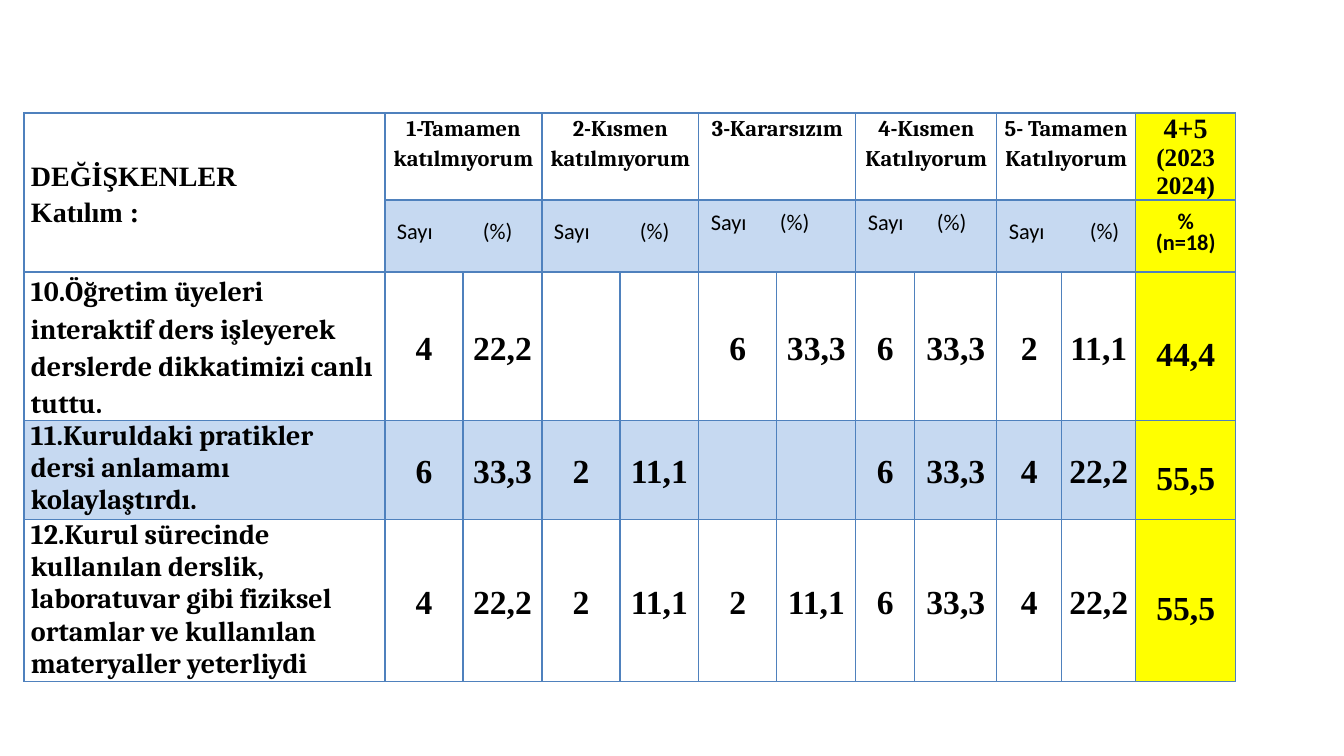
from dataclasses import dataclass

from lxml.etree import SubElement
from pptx import Presentation
from pptx.dml.color import RGBColor
from pptx.enum.text import MSO_ANCHOR as ANCHOR, PP_ALIGN as ALIGN
from pptx.oxml.ns import qn
from pptx.util import Pt

PX = 914400 / 100.8


def px(n):
    return round(n * PX)


@dataclass(frozen=True)
class Theme:
    ink: str = "000000"
    border: str = "4F81BD"
    band: str = "C6D9F1"
    total: str = "FFFF00"
    serif: str = "Times New Roman"
    label: str = "Cambria"
    sans: str = "Calibri"
    small: int = 16
    medium: int = 18
    large: int = 20
    figure: int = 24
    thin: float = 1
    thick: float = 2.25


class Deck:
    def __init__(self, theme):
        self.theme = theme
        self.prs = Presentation()
        self.prs.slide_width, self.prs.slide_height = px(1344), px(756)
        self.slide = self.prs.slides.add_slide(self.prs.slide_layouts[6])

    def table(self, left, top, widths, heights):
        frame = self.slide.shapes.add_table(
            len(heights), len(widths), px(left), px(top), px(sum(widths)), px(sum(heights)))
        table = frame.table
        table.first_row = table.horz_banding = False
        for column, width in zip(table.columns, widths):
            column.width = px(width)
        for row, height in zip(table.rows, heights):
            row.height = px(height)
        return table

    def cell(self, cell, fill=None, top=None, bottom=None):
        """Draw the borders, fill and margins of one cell."""
        thin = self.theme.thin
        for side, width in zip("LRTB", (thin, thin, top or thin, bottom or thin)):
            ln = SubElement(cell._tc.get_or_add_tcPr(), qn(f"a:ln{side}"), w=str(Pt(width)))
            solid = SubElement(ln, qn("a:solidFill"))
            SubElement(solid, qn("a:srgbClr"), val=self.theme.border)
        if fill:
            cell.fill.solid()
            cell.fill.fore_color.rgb = RGBColor.from_string(fill)
        else:
            cell.fill.background()
        cell.margin_left = cell.margin_right = px(7)
        cell.margin_top = cell.margin_bottom = 0

    def text(self, cell, lines, font, size, bold=True, align=ALIGN.CENTER,
             anchor=ANCHOR.MIDDLE, spacing=1.15, tab=None):
        """Write lines in a cell; a line is a string or a (string, size) pair."""
        cell.vertical_anchor = anchor
        tf = cell.text_frame
        for i, line in enumerate(lines):
            words, points = line if isinstance(line, tuple) else (line, size)
            p = tf.add_paragraph() if i else tf.paragraphs[0]
            p.alignment, p.line_spacing = align, spacing
            if tab:
                tabs = SubElement(p._p.get_or_add_pPr(), qn("a:tabLst"))
                SubElement(tabs, qn("a:tab"), pos=str(px(tab)), algn="l")
            r = p.add_run()
            r.text = words
            r.font.name, r.font.size, r.font.bold = font, Pt(points), bold
            r.font.color.rgb = RGBColor.from_string(self.theme.ink)


# Heading, tab position of "(%)", bottom margin of the sub-heading
ANSWERS = [
    ("1-Tamamen katılmıyorum", 86, 0),
    ("2-Kısmen katılmıyorum", 86, 0),
    ("3-Kararsızım", 69, 18),
    ("4-Kısmen Katılıyorum", 69, 18),
    ("5- Tamamen Katılıyorum", 81, 0),
]

# Statement, line spacing, count and percentage per answer, total
STATEMENTS = [
    ("10.Öğretim üyeleri interaktif ders işleyerek derslerde dikkatimizi canlı tuttu.", 1.15,
     ["4", "22,2", "", "", "6", "33,3", "6", "33,3", "2", "11,1"], "44,4"),
    ("11.Kuruldaki pratikler dersi anlamamı kolaylaştırdı.", 1.0,
     ["6", "33,3", "2", "11,1", "", "", "6", "33,3", "4", "22,2"], "55,5"),
    ("12.Kurul sürecinde kullanılan derslik, laboratuvar gibi fiziksel ortamlar ve "
     "kullanılan materyaller yeterliydi", 1.0,
     ["4", "22,2", "2", "11,1", "2", "11,1", "6", "33,3", "4", "22,2"], "55,5"),
]


def cell_fill(theme, row, col, last):
    if col == last:
        return theme.total
    return theme.band if row == 3 or (row == 1 and col) else None


def main():
    theme = Theme()
    deck = Deck(theme)
    widths = [361, 78, 79, 78, 79, 78, 79, 59, 82, 65, 74, 100]
    heights = [87, 72, 148, 99, 162]
    last = len(widths) - 1
    table = deck.table(24, 113, widths, heights)

    for row in range(len(heights)):
        for col in range(len(widths)):
            deck.cell(table.cell(row, col), cell_fill(theme, row, col, last),
                      top=theme.thick if row == 1 and col else None,
                      bottom=theme.thick if row == 0 and col else None)

    variables = table.cell(0, 0)
    variables.merge(table.cell(1, 0))
    deck.text(variables, ["DEĞİŞKENLER", "Katılım :"], theme.serif, theme.large,
              align=ALIGN.LEFT)

    for i, (heading, tab, bottom) in enumerate(ANSWERS):
        col = 2 * i + 1
        head, sub = table.cell(0, col), table.cell(1, col)
        head.merge(table.cell(0, col + 1))
        sub.merge(table.cell(1, col + 1))
        deck.text(head, [heading], theme.label, theme.small, anchor=ANCHOR.TOP)
        deck.text(sub, ["Sayı\t(%)"], theme.sans, theme.small, bold=False,
                  align=ALIGN.LEFT, spacing=Pt(13), tab=tab)
        sub.margin_left, sub.margin_bottom = px(12), px(bottom)

    deck.text(table.cell(0, last), ["4+5", ("(2023 2024)", theme.medium)], theme.serif,
              theme.large, anchor=ANCHOR.TOP, spacing=1.0)
    deck.text(table.cell(1, last), ["%", "(n=18)"], theme.sans, theme.small, spacing=Pt(15))

    for row, (statement, spacing, figures, total) in enumerate(STATEMENTS, 2):
        deck.text(table.cell(row, 0), [statement], theme.label, theme.large,
                  align=ALIGN.LEFT, anchor=ANCHOR.TOP, spacing=spacing)
        for col, figure in enumerate(figures, 1):
            if figure:
                deck.text(table.cell(row, col), [figure], theme.serif, theme.figure)
        deck.text(table.cell(row, last), [total], theme.serif, theme.figure, spacing=1.5)

    deck.prs.save("out.pptx")


if __name__ == "__main__":
    main()
